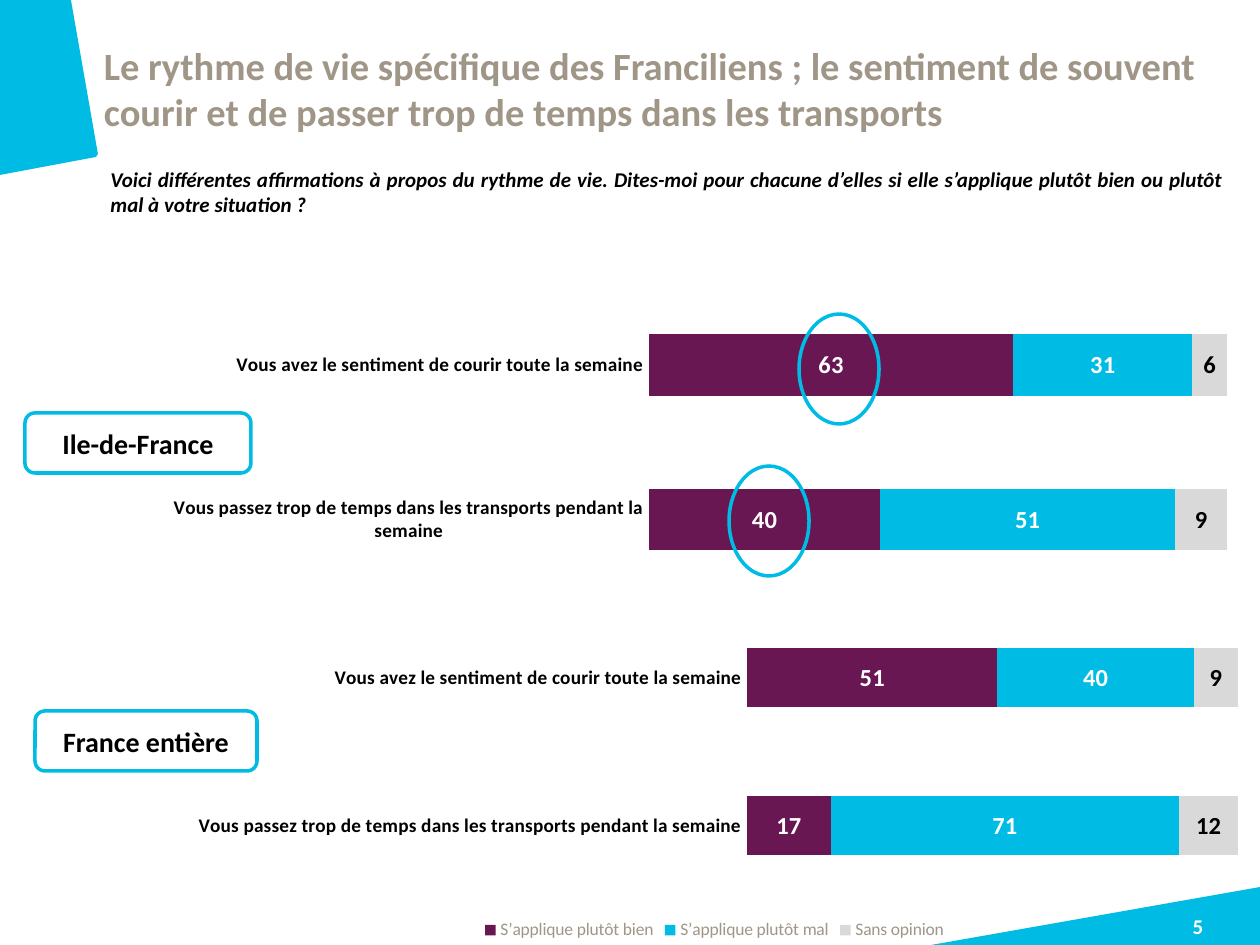
"""Build the slide on the pace of life in Ile-de-France and in France."""
from pptx import Presentation
from pptx.chart.data import CategoryChartData
from pptx.dml.color import RGBColor
from pptx.enum.chart import XL_CHART_TYPE, XL_LEGEND_POSITION, XL_TICK_MARK
from pptx.enum.shapes import MSO_SHAPE
from pptx.enum.text import MSO_ANCHOR, PP_ALIGN
from pptx.oxml import parse_xml
from pptx.oxml.ns import nsdecls, qn
from pptx.util import Pt

STACKED = XL_CHART_TYPE.BAR_STACKED_100
BOTTOM = XL_LEGEND_POSITION.BOTTOM
NO_TICK = XL_TICK_MARK.NONE
OVAL, ROUND = MSO_SHAPE.OVAL, MSO_SHAPE.ROUNDED_RECTANGLE
MIDDLE = MSO_ANCHOR.MIDDLE
LEFT, CENTER, JUSTIFY = PP_ALIGN.LEFT, PP_ALIGN.CENTER, PP_ALIGN.JUSTIFY

SCALE = 914400 / 126
BLUE, PLUM, GREY = "00BCE4", "691752", "D9D9D9"
TAUPE, BLACK, WHITE = "A09687", "000000", "FFFFFF"
CATS = [
    "Vous avez le sentiment de courir toute la semaine",
    "Vous passez trop de temps dans les transports pendant la semaine",
]
NAMES = ["S’applique plutôt bien", "S’applique plutôt mal", "Sans opinion"]
FILLS = [(PLUM, WHITE), (BLUE, WHITE), (GREY, BLACK)]


def px(*sizes):
    return [round(size * SCALE) for size in sizes]


def rgb(code):
    return RGBColor.from_string(code)


class Sketch:
    def __init__(self, slide, face="Calibri"):
        self.slide, self.face = slide, face

    def style(self, font, size, color, bold=True, italic=None):
        font.name, font.size = self.face, Pt(size)
        font.bold, font.italic = bold, italic
        font.color.rgb = rgb(color)

    def text(self, box, words, size, color, align=LEFT, italic=None, inset=True):
        frame = self.slide.shapes.add_textbox(*px(*box)).text_frame
        frame.word_wrap = True
        if not inset:
            frame.margin_left = frame.margin_right = 0
            frame.margin_top = frame.margin_bottom = 0
        line = frame.paragraphs[0]
        line.text, line.alignment = words, align
        self.style(line.font, size, color, italic=italic)

    def patch(self, start, *points):
        pen = self.slide.shapes.build_freeform(*start, scale=SCALE)
        pen.add_line_segments(points, close=True)
        shape = pen.convert_to_shape()
        shape.shadow.inherit = False
        shape.fill.solid()
        shape.fill.fore_color.rgb = rgb(BLUE)
        shape.line.fill.background()

    def ring(self, kind, box, words=None):
        shape = self.slide.shapes.add_shape(kind, *px(*box))
        shape.shadow.inherit = False
        shape.fill.background()
        shape.line.color.rgb = rgb(BLUE)
        shape.line.width = Pt(2)
        if words:
            frame = shape.text_frame
            frame.vertical_anchor = MIDDLE
            line = frame.paragraphs[0]
            line.text, line.alignment = words, CENTER
            self.style(line.font, 16, BLACK)

    def bars(self, box, rows, area, legend=False):
        data = CategoryChartData()
        data.categories = CATS
        for name, values in zip(NAMES, rows):
            data.add_series(name, values)
        chart = self.slide.shapes.add_chart(STACKED, *px(*box), data).chart
        self.style(chart.font, 18, TAUPE, bold=False)
        chart.has_title = False
        chart.has_legend = legend
        if legend:
            chart.legend.position = BOTTOM
            chart.legend.include_in_layout = False
            self.style(chart.legend.font, 10, TAUPE, bold=False)
        axis = chart.category_axis
        axis.reverse_order = True
        axis.major_tick_mark = NO_TICK
        axis.format.line.fill.background()
        self.style(axis.tick_labels.font, 11, BLACK)
        chart.value_axis.has_major_gridlines = False
        chart.value_axis.visible = False
        plot = chart.plots[0]
        plot.gap_width, plot.overlap = 150, 100
        plot.vary_by_categories = False
        for series, (fill, ink) in zip(plot.series, FILLS):
            series.format.fill.solid()
            series.format.fill.fore_color.rgb = rgb(fill)
            labels = series.data_labels
            labels.show_value = True
            self.style(labels.font, 14, ink)
        self.place(chart.element.chart.plotArea, area)

    def place(self, plot, area):
        old = plot.find(qn("c:layout"))
        if old is not None:
            plot.remove(old)
        modes = "".join(f'<c:{key}Mode val="edge"/>' for key in "xy")
        sizes = "".join(f'<c:{key} val="{val}"/>' for key, val in zip("xywh", area))
        plot.insert(0, parse_xml(
            f'<c:layout {nsdecls("c")}><c:manualLayout><c:layoutTarget val="inner"/>'
            f"{modes}{sizes}</c:manualLayout></c:layout>"))


def main():
    deck = Presentation()
    deck.slide_width, deck.slide_height = px(1260, 945)
    art = Sketch(deck.slides.add_slide(deck.slide_layouts[6]))

    art.patch((931, 945), (1260, 887), (1260, 945))
    art.patch((0, 175), (0, 0), (71, 0), (98, 154), (96, 157))
    art.text((1136, 914, 124, 31), "5", 12, WHITE, CENTER, inset=False)
    art.text((104, 42, 1132, 62),
             "Le rythme de vie spécifique des Franciliens ; le sentiment de souvent "
             "courir et de passer trop de temps dans les transports",
             22, TAUPE, inset=False)
    art.text((98, 160, 1138, 44),
             "Voici différentes affirmations à propos du rythme de vie. Dites-moi pour "
             "chacune d’elles si elle s’applique plutôt bien ou plutôt mal à votre "
             "situation ?", 12, BLACK, JUSTIFY, italic=True)

    art.bars((169, 597, 1091, 348), [(51, 17), (40, 71), (9, 12)],
             (0.53, 0.02, 0.45, 0.85), legend=True)
    art.bars((169, 270, 1091, 348), [(63, 40), (31, 51), (6, 9)],
             (0.44, 0.05, 0.53, 0.89))
    for left, top in ((799, 314), (729, 466)):
        art.ring(OVAL, (left, top, 80, 110))
    art.ring(ROUND, (35, 711, 222, 60), "France entière")
    art.ring(ROUND, (25, 413, 226, 60), "Ile-de-France")
    deck.save("out.pptx")


if __name__ == "__main__":
    main()
